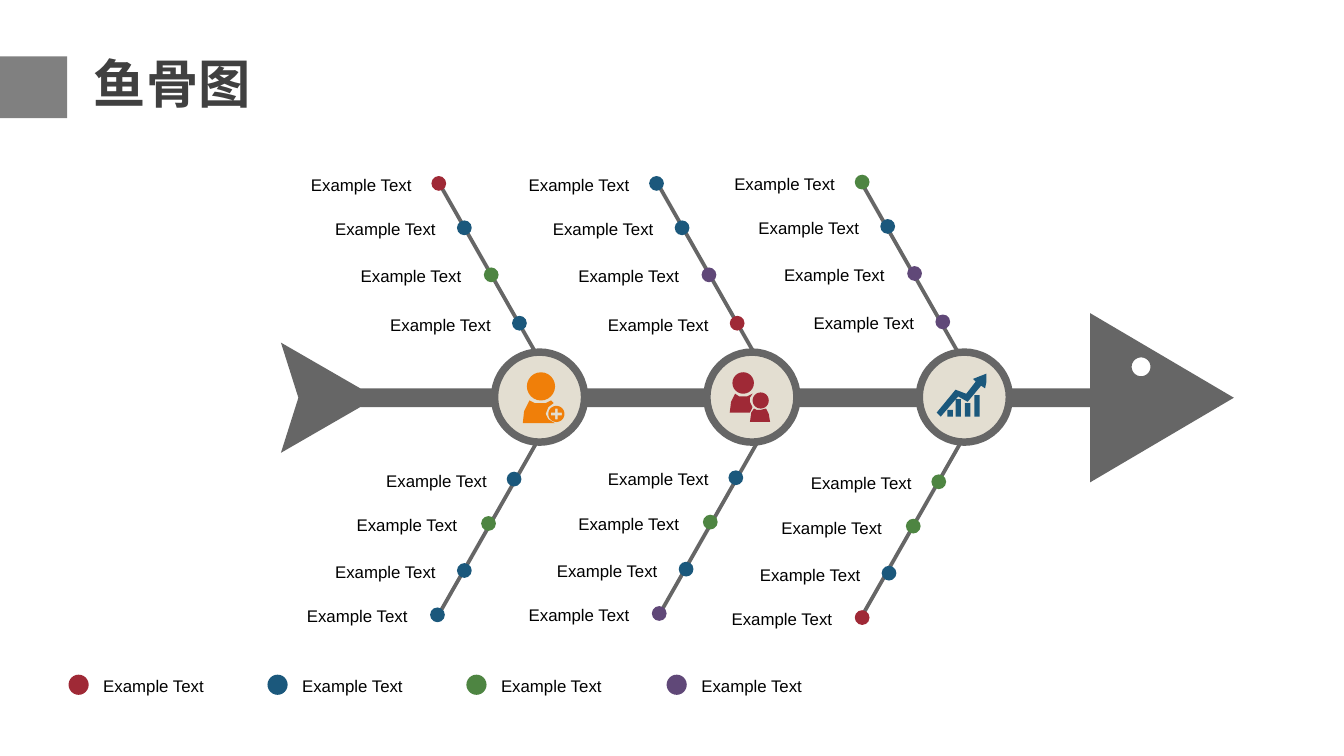
from math import cos, pi, sin
from lxml.etree import SubElement
from pptx import Presentation
from pptx.dml.color import RGBColor
from pptx.enum.shapes import MSO_CONNECTOR, MSO_SHAPE as Preset
from pptx.enum.text import MSO_ANCHOR, MSO_AUTO_SIZE, PP_ALIGN
from pptx.oxml.ns import qn
from pptx.util import Pt

PX = 9144
FINE = 100
RED, BLUE, GREEN, PURPLE = "9F2936", "1B587C", "4E8542", "604878"
BONE, CREAM, ORANGE = "666666", "E3DED1", "F07F09"

deck = Presentation()
deck.slide_width, deck.slide_height = 1000 * PX, 1125 * PX // 2
page = deck.slides.add_slide(deck.slide_layouts[6])
shapes = page.shapes


def draw(outline, colour, *frame, hole=None):
    if frame:
        shape = shapes.add_shape(outline, *(value * PX for value in frame))
    else:
        builder = None
        for contour in filter(None, [outline, hole]):
            points = [(x * FINE, y * FINE) for x, y in contour]
            if builder:
                builder.move_to(*points[0])
            else:
                builder = shapes.build_freeform(*points[0], scale=PX / FINE)
            builder.add_line_segments(points[1:], close=True)
        shape = builder.convert_to_shape()
    shape.shadow.inherit = False
    shape.fill.solid()
    shape.fill.fore_color.rgb = RGBColor.from_string(colour)
    shape.line.fill.background()
    return shape


def write(text, left, top, width, height, size=9, colour="000000", align=PP_ALIGN.LEFT):
    box = shapes.add_textbox(left * PX, top * PX, width * PX, height * PX)
    frame = box.text_frame
    frame.word_wrap = True
    para = frame.paragraphs[0]
    para.text = text
    para.alignment = align
    para.font.name = "Arial"
    para.font.size = Pt(size)
    para.font.color.rgb = RGBColor.from_string(colour)
    return frame


turns = [(cos(step * pi / 16), sin(step * pi / 16)) for step in range(32)]
eye = [(849 - 7 * x, 273 + 7 * y) for x, y in turns]
draw([(918, 296), (811, 233), (811, 289), (268, 289), (209, 255), (222, 296),
      (209, 337), (268, 303), (811, 303), (811, 359)], BONE, hole=eye)

upper_steps = [(0, 0, 121), (19, 33, 122), (39, 68, 123), (60, 104, 122)]
lower_steps = [(0, 0, 123), (20, -33, 122), (38, -68, 124), (57, -101, 121)]
ribs = [
    (400, 265, -130, 321, 131, upper_steps, [RED, BLUE, GREEN, BLUE]),
    (563, 266, -130, 483, 131, upper_steps, [BLUE, BLUE, PURPLE, RED]),
    (715, 266, -130, 636, 130, upper_steps, [GREEN, BLUE, PURPLE, PURPLE]),
    (400, 328, 130, 320, 452, lower_steps, [BLUE, BLUE, GREEN, BLUE]),
    (563, 330, 130, 485, 451, lower_steps, [PURPLE, BLUE, GREEN, BLUE]),
    (715, 329, 130, 636, 454, lower_steps, [RED, BLUE, GREEN, GREEN]),
]
for root_x, root_y, rise, tip_x, tip_y, steps, colours in ribs:
    rib = shapes.add_connector(MSO_CONNECTOR.STRAIGHT, root_x * PX, root_y * PX,
                               (root_x - 74) * PX, (root_y + rise) * PX)
    rib.line.color.rgb = RGBColor.from_string(BONE)
    rib.line.width = Pt(2)
    SubElement(rib._element.spPr, qn("a:effectLst"))
    for (across, down, gap), colour in zip(steps, colours):
        left, top = tip_x + across, tip_y + down
        draw(Preset.OVAL, colour, left, top, 11, 11)
        label = write("Example Text", left - gap, top - 6, 116, 25, align=PP_ALIGN.RIGHT)
        label.auto_size = MSO_AUTO_SIZE.SHAPE_TO_FIT_TEXT

for index, colour in enumerate([RED, BLUE, GREEN, PURPLE]):
    left = 51 + 445 * index // 3
    draw(Preset.OVAL, colour, left, 502, 15, 15)
    label = write("Example Text", left + 16, 498, 97, 25)
    label.word_wrap = False
    label.auto_size = MSO_AUTO_SIZE.SHAPE_TO_FIT_TEXT

for index in range(3):
    joint = draw(Preset.OVAL, CREAM, 368 + 158 * index, 262, 67, 67)
    joint.line.color.rgb = RGBColor.from_string(BONE)
    joint.line.width = Pt(4)

draw(Preset.OVAL, ORANGE, 392, 277, 21, 21)
draw([(394, 298), (398, 300), (402, 300), (406, 300), (410, 298), (412, 300), (408, 303),
      (406, 308), (408, 312), (413, 315), (389, 315), (390, 306)], ORANGE)
badge = [(414 + 6 * x, 308 - 6 * y) for x, y in turns]
plus = [(418, 309), (415, 309), (415, 312), (413, 312), (413, 309), (410, 309),
        (410, 307), (413, 307), (413, 304), (415, 304), (415, 307), (418, 307)]
draw(badge, ORANGE, hole=plus)

draw(Preset.OVAL, RED, 545, 277, 16, 16)
draw([(547, 293), (550, 295), (553, 295), (556, 295), (560, 293), (558, 296), (558, 299),
      (560, 303), (558, 307), (543, 307), (544, 299)], RED)
draw([(566 + 6 * x, 298 + 6 * y) for x, y in turns], RED)
draw([(561, 304), (563, 305), (566, 305), (570, 304), (572, 308), (573, 314), (558, 314),
      (559, 307)], RED)

draw([(729, 280), (724, 282), (726, 284), (719, 293), (711, 290), (697, 307), (700, 310),
      (713, 295), (720, 299), (730, 287), (733, 289), (734, 284), (734, 278)], BLUE)
for index, height in enumerate([5, 13, 10, 16]):
    draw(Preset.RECTANGLE, BLUE, 705 + 20 * index // 3, 310 - height, 4, height)

title = write("鱼骨图", 60, 33, 221, 63, 28, "404040")
title.vertical_anchor = MSO_ANCHOR.MIDDLE
title.paragraphs[0].font.bold = True
title.paragraphs[0].line_spacing = 0.9
draw(Preset.RECTANGLE, "808080", 0, 42, 50, 46)

deck.save("out.pptx")
